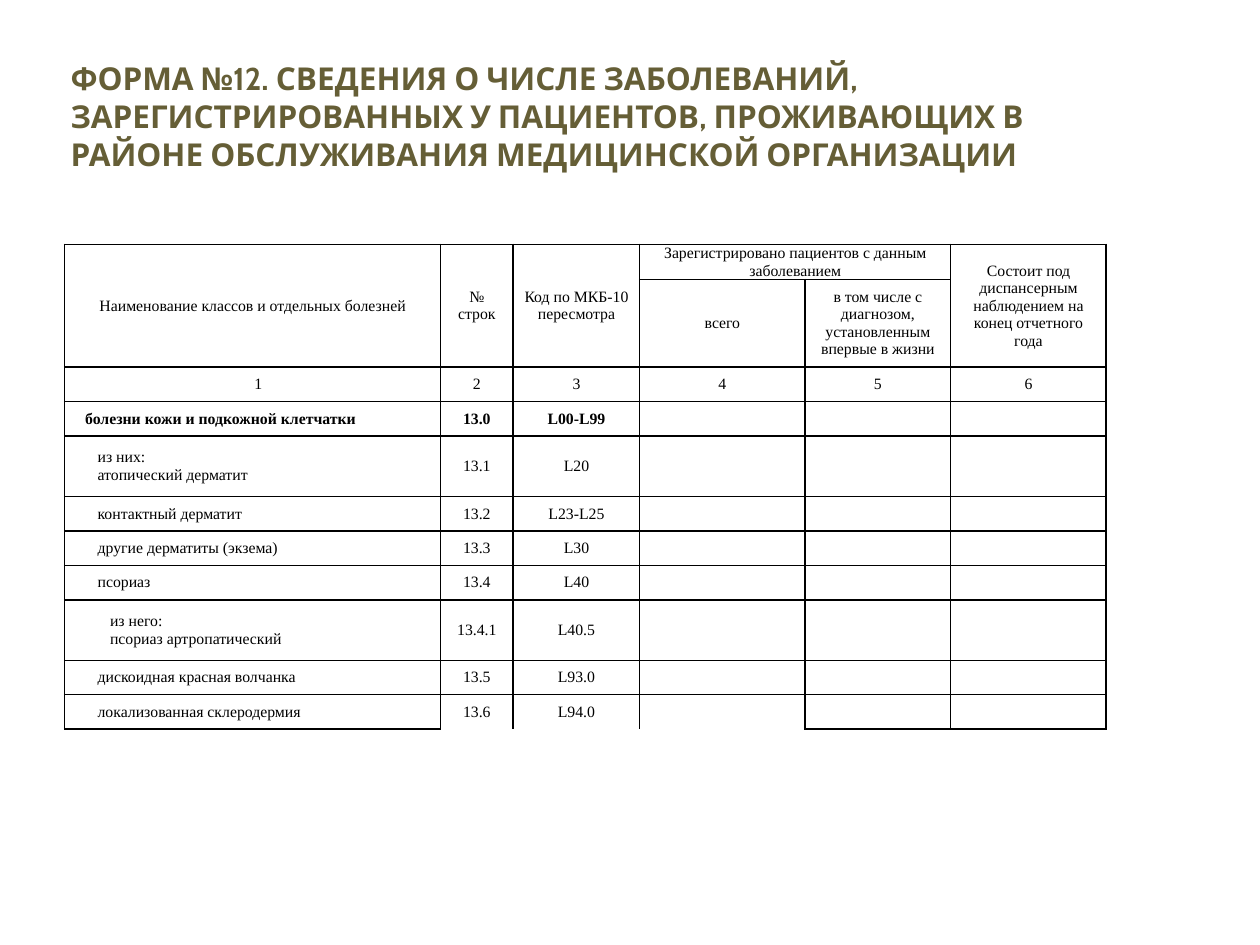
from dataclasses import dataclass

from lxml import etree
from pptx import Presentation
from pptx.dml.color import RGBColor
from pptx.enum import text
from pptx.oxml import ns
from pptx.util import Pt


@dataclass(frozen=True)
class Theme:
    title_font: str = "Cabin"
    table_font: str = "Times New Roman"
    title_size: float = 18
    table_size: float = 9
    line_spacing: float = 10
    rule: float = 1
    title_color: str = "655E36"
    ink: str = "000000"


THEME = Theme()
CENTER, LEFT = text.PP_ALIGN.CENTER, text.PP_ALIGN.LEFT

TITLE = ("ФОРМА №12. СВЕДЕНИЯ О ЧИСЛЕ ЗАБОЛЕВАНИЙ, ЗАРЕГИСТРИРОВАННЫХ У ПАЦИЕНТОВ, "
         "ПРОЖИВАЮЩИХ В РАЙОНЕ ОБСЛУЖИВАНИЯ МЕДИЦИНСКОЙ ОРГАНИЗАЦИИ")

COLUMN_WIDTHS = [214.8, 41.6, 72.3, 94.5, 83.2, 88.9]
LINE_ROW, PAIR_ROW, HEADER_ROW = 19.7, 34.6, 39.4

# Header cells: row, column, last row, last column, lines
HEADERS = [
    (0, 0, 1, 0, ["Наименование классов и отдельных болезней"]),
    (0, 1, 1, 1, ["№ строк"]),
    (0, 2, 1, 2, ["Код по МКБ-10", "пересмотра"]),
    (0, 3, 0, 4, ["Зарегистрировано пациентов с данным заболеванием"]),
    (0, 5, 1, 5, ["Состоит под диспансерным наблюдением на конец отчетного года"]),
    (1, 3, 1, 3, ["всего"]),
    (1, 4, 1, 4, ["в том числе с диагнозом, установленным впервые в жизни"]),
]

# Diseases: indent level, name lines, row number, code
DISEASES = [
    (1, ["болезни кожи и подкожной клетчатки"], "13.0", "L00-L99"),
    (2, ["из них:", "атопический дерматит"], "13.1", "L20"),
    (2, ["контактный дерматит"], "13.2", "L23-L25"),
    (2, ["другие дерматиты (экзема)"], "13.3", "L30"),
    (2, ["псориаз"], "13.4", "L40"),
    (3, ["из него:", "псориаз артропатический"], "13.4.1", "L40.5"),
    (2, ["дискоидная красная волчанка"], "13.5", "L93.0"),
    (2, ["локализованная склеродермия"], "13.6", "L94.0"),
]
INDENTS = {0: 0, 1: 6.75, 2: 13.9, 3: 21}


def add_span(para, words, font, size, color, bold):
    span = para.add_run()
    span.text = words
    span.font.name = font
    span.font.size = Pt(size)
    span.font.bold = bold
    span.font.color.rgb = RGBColor.from_string(color)


def write_cell(cell, lines, align=CENTER, level=0, bold=False):
    for index, line in enumerate(lines):
        frame = cell.text_frame
        para = frame.paragraphs[0] if index == 0 else frame.add_paragraph()
        para.alignment = align
        para.line_spacing = Pt(THEME.line_spacing)
        if level:
            properties = para._p.get_or_add_pPr()
            properties.set("marL", str(Pt(INDENTS[level])))
            properties.set("indent", "0")
        add_span(para, line, THEME.table_font, THEME.table_size, THEME.ink, bold)


def style_cell(cell, open_bottom):
    cell.fill.background()
    cell.vertical_anchor = text.MSO_ANCHOR.MIDDLE
    cell.margin_left = cell.margin_right = Pt(5)
    cell.margin_top = cell.margin_bottom = 0
    # Keep empty cells from stretching their row
    for para in cell.text_frame.paragraphs:
        end = etree.SubElement(para._p, ns.qn("a:endParaRPr"))
        end.set("sz", str(int(THEME.table_size * 100)))
    # Borders come before the fill
    properties = cell._tc.get_or_add_tcPr()
    for index, side in enumerate(("lnL", "lnR", "lnT", "lnB")):
        line = etree.Element(ns.qn(f"a:{side}"), w=str(Pt(THEME.rule)))
        if side == "lnB" and open_bottom:
            etree.SubElement(line, ns.qn("a:noFill"))
        else:
            fill = etree.SubElement(line, ns.qn("a:solidFill"))
            etree.SubElement(fill, ns.qn("a:srgbClr"), val=THEME.ink)
        properties.insert(index, line)


def add_title(page, left, top, width, height):
    box = page.shapes.add_textbox(Pt(left), Pt(top), Pt(width), Pt(height))
    frame = box.text_frame
    frame.word_wrap = True
    frame.vertical_anchor = text.MSO_ANCHOR.BOTTOM
    frame.margin_left = frame.margin_right = Pt(3.6)
    frame.margin_top = frame.margin_bottom = 0
    add_span(frame.paragraphs[0], TITLE, THEME.title_font, THEME.title_size,
             THEME.title_color, True)


def add_disease_table(page, left, top):
    heights = [LINE_ROW, HEADER_ROW, LINE_ROW]
    heights += [PAIR_ROW if len(names) > 1 else LINE_ROW for _, names, _, _ in DISEASES]
    table = page.shapes.add_table(
        len(heights), len(COLUMN_WIDTHS), Pt(left), Pt(top),
        Pt(sum(COLUMN_WIDTHS)), Pt(sum(heights))).table
    table.first_row = table.horz_banding = False
    for column, width in zip(table.columns, COLUMN_WIDTHS):
        column.width = Pt(width)
    for row, height in zip(table.rows, heights):
        row.height = Pt(height)

    # Header and column numbers
    for row, column, last_row, last_column, lines in HEADERS:
        cell = table.cell(row, column)
        if (row, column) != (last_row, last_column):
            cell.merge(table.cell(last_row, last_column))
        write_cell(cell, lines)
    for column in range(len(COLUMN_WIDTHS)):
        write_cell(table.cell(2, column), [str(column + 1)], level=int(column == 0))

    # Diseases; the class heading is bold
    for row, (level, names, number, code) in enumerate(DISEASES, start=3):
        bold = level == 1
        write_cell(table.cell(row, 0), names, LEFT, level, bold)
        write_cell(table.cell(row, 1), [number], bold=bold)
        write_cell(table.cell(row, 2), [code], bold=bold)

    # The last row is open below its middle columns
    for row in range(len(heights)):
        for column in range(len(COLUMN_WIDTHS)):
            open_bottom = row == len(heights) - 1 and 1 <= column <= 3
            style_cell(table.cell(row, column), open_bottom)


def main():
    deck = Presentation()
    deck.slide_width, deck.slide_height = Pt(720), Pt(540)
    page = deck.slides.add_slide(deck.slide_layouts[6])
    add_title(page, 36.7, 20.9, 570.2, 77.8)
    add_disease_table(page, 36.9, 139.7)
    deck.save("out.pptx")


if __name__ == "__main__":
    main()
